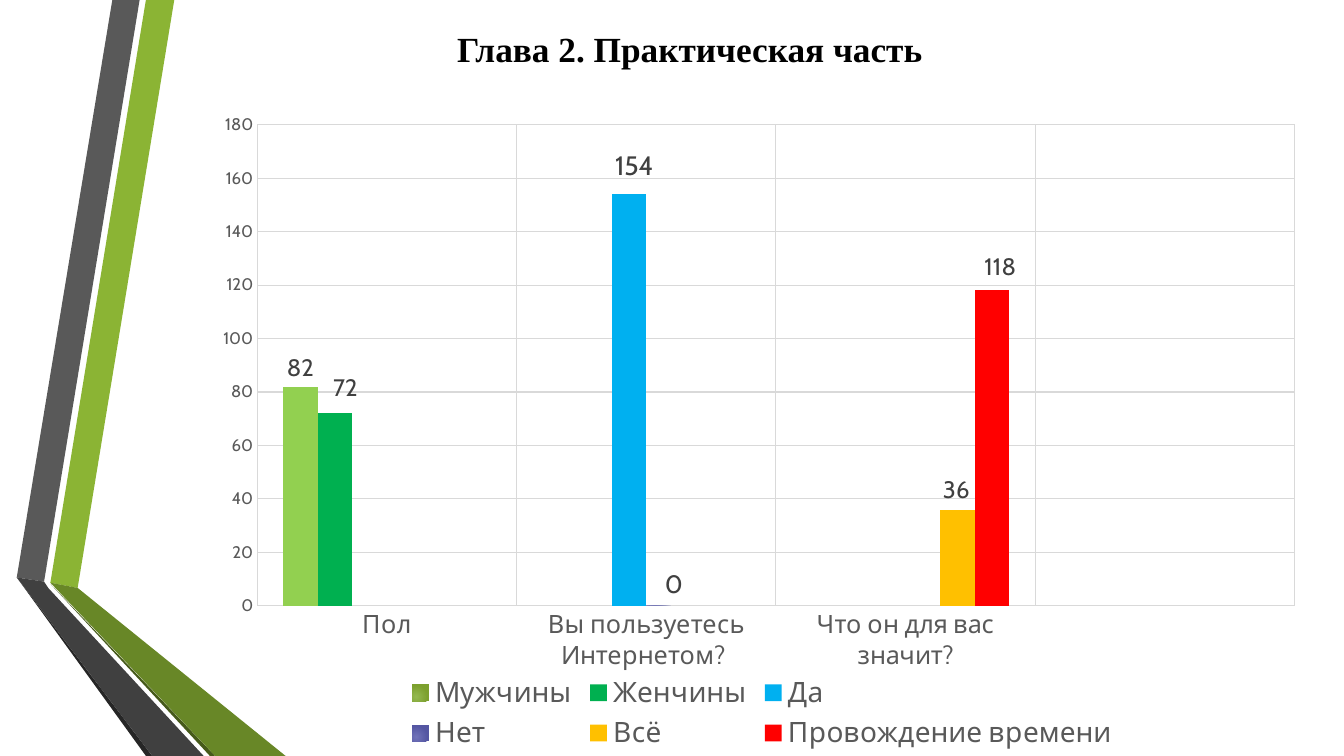
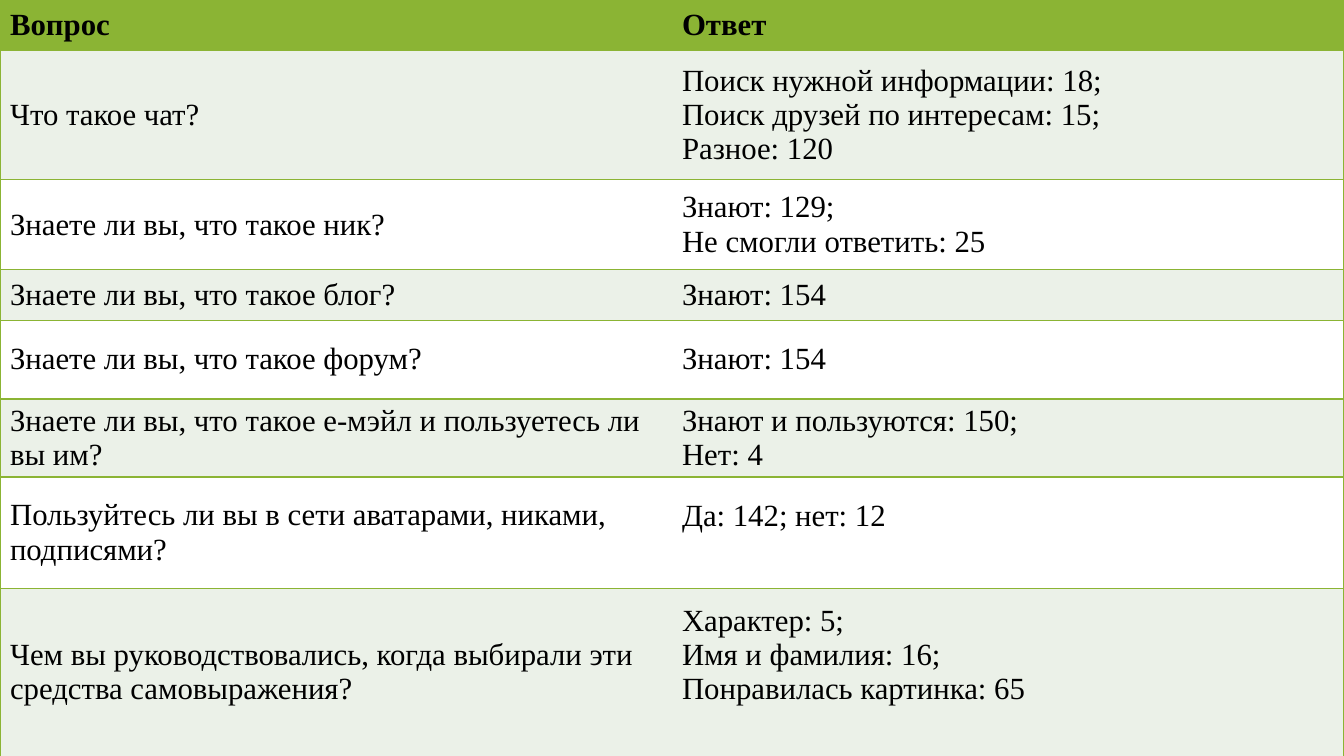
from lxml import etree
from pptx import Presentation
from pptx import util as u
from pptx.chart import data as chart_data
from pptx.dml import color
from pptx.enum import chart as chart_enum, text
from pptx.oxml import ns, parse_xml

PX = 9525
WIDTH, HEIGHT = 1280, 720
SERIF, SANS = "Times New Roman", "Cabin"
COLORS = {
    "black": "000000", "white": "FFFFFF", "green": "8BB434", "olive": "688727",
    "olive_edge": "465A1A", "grey": "595959", "charcoal": "404040", "charcoal_edge": "262626",
    "grid": "D9D9D9", "band": "EBF1E8", "lime": "92D050", "emerald": "00B050",
    "sky": "00B0F0", "amber": "FFC000", "red": "FF0000",
    "green_light": "94B951", "green_dark": "7CA02E",
    "violet_light": "7173BA", "violet_dark": "5456A2",
}
RIBBONS = [
    ("green", [(48, 555), (74, 560), (166, 0), (139, 0)]),
    ("grey", [(133, 0), (107, 0), (16, 550), (42, 554)]),
    ("charcoal_edge", [(16, 550), (139, 720), (145, 720)]),
    ("olive_edge", [(48, 556), (200, 720), (205, 720)]),
    ("olive", [(48, 555), (205, 720), (272, 720), (74, 560)]),
    ("charcoal", [(194, 720), (46, 560), (42, 554), (16, 550), (145, 720)]),
]
CATEGORIES = ["Пол", "Вы пользуетесь Интернетом? \n", "Что он для вас значит?\n", ""]
SERIES = [
    ("Мужчины", 0, 82, ("green_light", "green_dark"), 17, (0, 0)),
    ("Женчины", 0, 72, "emerald", 17, (10, -6)),
    ("Да", 1, 154, "sky", 19, (5, -8)),
    ("Нет", 1, 0, ("violet_light", "violet_dark"), 18, (10, -2)),
    ("Всё", 2, 36, "amber", 17, (-1, -1)),
    ("Провождение времени", 2, 118, "red", 17, (8, -5)),
]
ANSWERS = [
    (48, "Вопрос", "Ответ", 0),
    (123, "Что такое чат?",
     "Поиск нужной информации: 18;\nПоиск друзей по интересам: 15;\nРазное: 120", 0),
    (86, "Знаете ли вы, что такое ник?", "Знают: 129;\nНе смогли ответить: 25", 0),
    (48, "Знаете ли вы, что такое блог?", "Знают: 154", 0),
    (75, "Знаете ли вы, что такое форум?", "Знают: 154", 0),
    (74, "Знаете ли вы, что такое е-мэйл и пользуетесь ли вы им?",
     "Знают и пользуются: 150;\nНет: 4", 0),
    (106, "Пользуйтесь ли вы в сети аватарами, никами, подписями?", "Да: 142; нет: 12", 32),
    (160, "Чем вы руководствовались, когда выбирали эти средства самовыражения?",
     "Характер: 5;\nИмя и фамилия: 16;\nПонравилась картинка: 65", 32),
]
CELL_MARGIN = 2


def rgb(name):
    return color.RGBColor.from_string(COLORS[name])


def emu(*lengths):
    return [u.Emu(round(length * PX)) for length in lengths]


def set_font(font, size, name, shade, bold=False):
    font.size, font.name, font.bold = u.Pt(size), name, bold
    font.color.rgb = rgb(shade)


def set_line(line, shade, width):
    line.color.rgb = rgb(shade)
    line.width = u.Pt(width)


def add_ribbons(slide, left, top):
    for shade, points in RIBBONS:
        builder = slide.shapes.build_freeform(*points[0], scale=PX)
        builder.add_line_segments(points[1:], close=True)
        shape = builder.convert_to_shape(*emu(left, top))
        shape.shadow.inherit = False
        shape.fill.solid()
        shape.fill.fore_color.rgb = rgb(shade)
        shape.line.fill.background()


def add_ribbon_slide(presentation):
    slide = presentation.slides.add_slide(presentation.slide_layouts[6])
    add_ribbons(slide, 0, 0)
    return slide


def add_title(slide, box, title):
    frame = slide.shapes.add_textbox(*emu(*box)).text_frame
    frame.word_wrap = True
    frame.vertical_anchor = text.MSO_ANCHOR.MIDDLE
    paragraph = frame.paragraphs[0]
    paragraph.text = title
    paragraph.alignment = text.PP_ALIGN.CENTER
    set_font(paragraph.font, 25.2, SERIF, "black", True)


def manual_layout(box, **values):
    x, y, width, height = box
    sizes = {"x": width, "w": width, "y": height, "h": height}
    layout = etree.Element(ns.qn("c:layout"))
    manual = etree.SubElement(layout, ns.qn("c:manualLayout"))
    if "w" in values:
        for tag, value in (("layoutTarget", "inner"), ("xMode", "edge"), ("yMode", "edge")):
            etree.SubElement(manual, ns.qn("c:" + tag), val=value)
    for tag, value in values.items():
        etree.SubElement(manual, ns.qn("c:" + tag), val=str(value / sizes[tag]))
    return layout


def fill_series(series, shade):
    fill = series.format.fill
    fill.solid()
    if isinstance(shade, str):
        fill.fore_color.rgb = rgb(shade)
        return
    first, last = (COLORS[name] for name in shade)
    gradient = parse_xml(
        f'<a:gradFill {ns.nsdecls("a")} rotWithShape="1"><a:gsLst>'
        f'<a:gs pos="0"><a:srgbClr val="{first}"/></a:gs>'
        f'<a:gs pos="100000"><a:srgbClr val="{last}"/></a:gs></a:gsLst>'
        '<a:path path="circle"><a:fillToRect l="50000" t="100000" r="100000" b="50000"/>'
        '</a:path></a:gradFill>')
    solid = series._element.xpath("c:spPr/a:solidFill")[0]
    solid.getparent().replace(solid, gradient)


def style_axis(axis, size):
    axis.major_tick_mark = axis.minor_tick_mark = chart_enum.XL_TICK_MARK.NONE
    axis.has_major_gridlines = True
    set_line(axis.major_gridlines.format.line, "grid", 0.75)
    set_font(axis.tick_labels.font, size, SANS, "grey")


def add_survey_chart(slide, box):
    data = chart_data.CategoryChartData()
    data.categories = CATEGORIES
    for name, category, value, *_ in SERIES:
        data.add_series(name, [value if index == category else None
                               for index in range(len(CATEGORIES))])
    chart = slide.shapes.add_chart(
        chart_enum.XL_CHART_TYPE.COLUMN_CLUSTERED, *emu(*box), data).chart
    chart.has_title = False
    set_font(chart.font, 10, SANS, "black")

    style_axis(chart.category_axis, 18)
    set_line(chart.category_axis.format.line, "grid", 1)
    style_axis(chart.value_axis, 12)
    chart.value_axis.format.line.fill.background()
    chart.value_axis.minimum_scale = 0
    chart.value_axis.maximum_scale = 180
    chart.value_axis.major_unit = 20

    chart.has_legend = True
    chart.legend.position = chart_enum.XL_LEGEND_POSITION.BOTTOM
    chart.legend.include_in_layout = False
    set_font(chart.legend.font, 20, SANS, "grey")

    plot = chart.plots[0]
    plot.gap_width, plot.overlap, plot.vary_by_categories = 150, 0, False
    for series, (_, category, _, shade, size, (right, down)) in zip(plot.series, SERIES):
        fill_series(series, shade)
        label = series.points[category].data_label
        set_font(label.font, size, SANS, "charcoal")
        label.position = chart_enum.XL_LABEL_POSITION.OUTSIDE_END
        if right or down:
            element = series._element.xpath("c:dLbls/c:dLbl")[0]
            element.insert(1, manual_layout(box, x=right, y=down))
    men_fill = plot.series[0].points[0].format.fill
    men_fill.solid()
    men_fill.fore_color.rgb = rgb("lime")

    area = chart._chartSpace.xpath("c:chart/c:plotArea")[0]
    for layout in area.xpath("c:layout"):
        area.remove(layout)
    area.insert(0, manual_layout(box, x=74, y=60, w=988, h=458))


def set_borders(cell, open_side):
    properties = cell._tc.get_or_add_tcPr()
    for side in "LRTB":
        line = etree.SubElement(properties, ns.qn("a:ln" + side), w=str(u.Pt(1)))
        if side == open_side:
            etree.SubElement(line, ns.qn("a:noFill"))
        else:
            solid = etree.SubElement(line, ns.qn("a:solidFill"))
            etree.SubElement(solid, ns.qn("a:srgbClr"), val=COLORS["green"])


def add_answer_table(slide, box):
    table = slide.shapes.add_table(len(ANSWERS), 2, *emu(*box)).table
    table.first_row = table.horz_banding = False
    for column in table.columns:
        column.width = emu(box[2] / 2)[0]
    for index, (height, question, answer, raised) in enumerate(ANSWERS):
        table.rows[index].height = emu(height)[0]
        shade = "green" if index == 0 else "band" if index % 2 else "white"
        parts = ((question, "R", 0), (answer, "L", raised))
        for cell, (content, open_side, lift) in zip(table.rows[index].cells, parts):
            set_borders(cell, open_side)
            cell.fill.solid()
            cell.fill.fore_color.rgb = rgb(shade)
            cell.vertical_anchor = text.MSO_ANCHOR.MIDDLE
            cell.margin_top, cell.margin_bottom = emu(CELL_MARGIN, CELL_MARGIN + lift)
            cell.text = content
            for paragraph in cell.text_frame.paragraphs:
                set_font(paragraph.font, 22, SERIF, "black", index == 0)


def main():
    presentation = Presentation()
    presentation.slide_width, presentation.slide_height = emu(WIDTH, HEIGHT)

    chart_slide = add_ribbon_slide(presentation)
    add_title(chart_slide, (153, 21, 1008, 51), "Глава 2. Практическая часть")
    add_survey_chart(chart_slide, (171, 59, 1109, 661))

    table_slide = add_ribbon_slide(presentation)
    add_answer_table(table_slide, (0, 0, WIDTH, HEIGHT))

    presentation.save("out.pptx")


if __name__ == "__main__":
    main()
